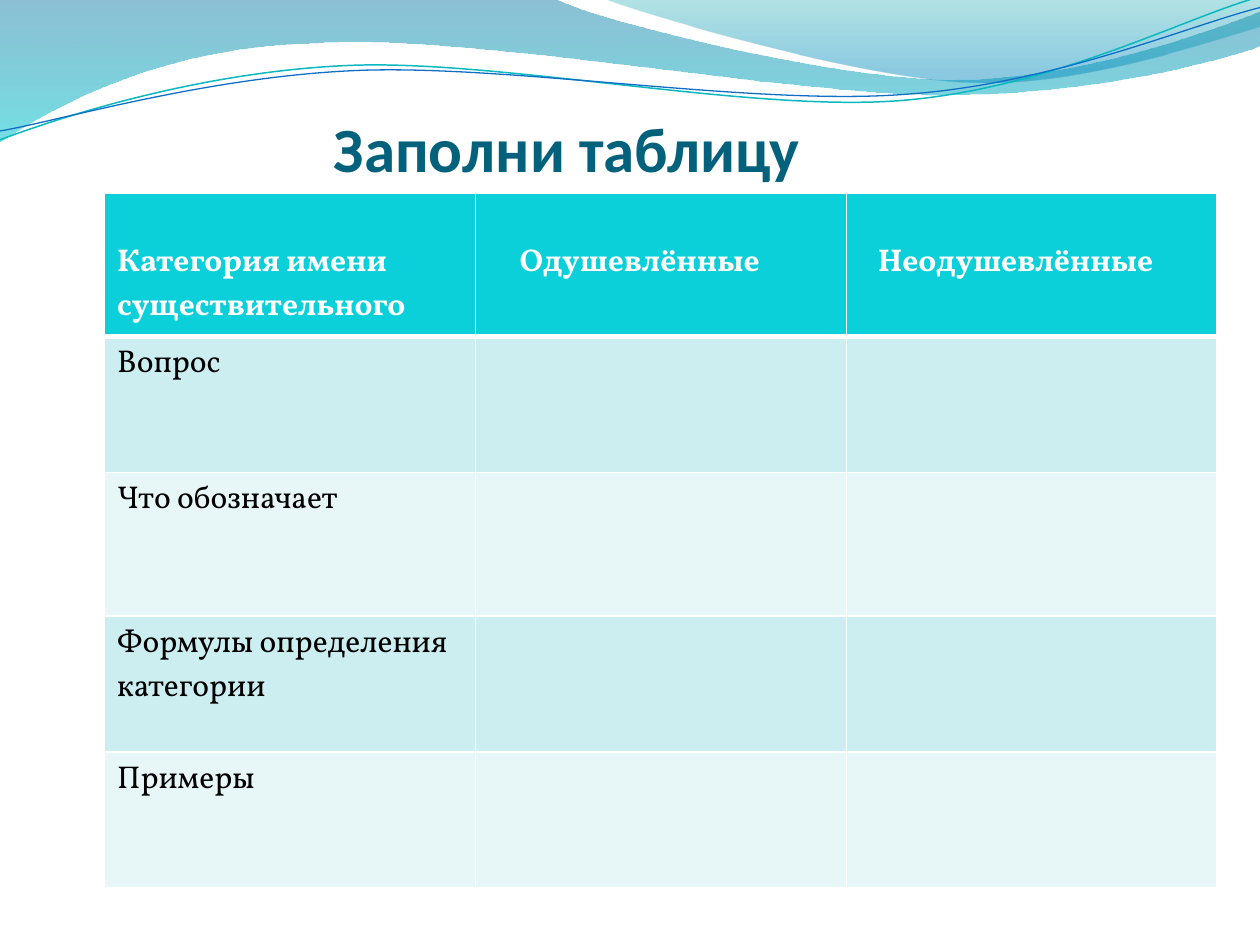
from lxml.etree import SubElement
from pptx import Presentation
from pptx.dml.color import RGBColor
from pptx.enum.text import MSO_ANCHOR, PP_ALIGN
from pptx.oxml.ns import qn
from pptx.util import Inches, Pt

COLORS = {
    "white": "FFFFFF", "black": "000000", "title": "04617B",
    "header": "0BD0D9", "dark_row": "CCEEF1", "light_row": "E7F7F8",
    "teal_line": "0AB8BF", "blue_line": "0F6FC6",
    "wave_top": "0074A1", "wave_bottom": "00C6CF",
    "corner_top": "00A1A9", "corner_bottom": "008BBF",
}

# Outlines in inches: a pair is a line end, six numbers are a Bézier curve
WAVE = [(0, 0), (4.4, -0.01), (4.76, 0.17, 6.64, 0.63, 7.58, 0.63),
        (8.53, 0.63, 9.58, 0.26, 10, 0.09), (10.01, 0.36),
        (9.83, 0.44, 8.7, 0.76, 7.46, 0.75), (6.22, 0.75, 3.82, 0.28, 2.57, 0.34),
        (1.29, 0.36, 0.46, 0.83, -0.01, 1.13), (0, 0)]
CORNER = [(4.79, -0.01), (5.09, 0.11, 6.82, 0.62, 7.69, 0.65),
          (8.56, 0.69, 9.61, 0.32, 10, 0.21), (10, 0), (4.79, -0.01)]
TEAL_LINE = [(0, 1.11), (0.48, 0.93, 1.58, 0.57, 2.77, 0.52),
             (3.95, 0.47, 5.93, 0.89, 7.13, 0.8), (8.33, 0.71, 9.38, 0.15, 9.98, -0.02)]
BLUE_LINE = [(0, 1.04), (0.47, 0.96, 1.64, 0.61, 2.83, 0.56),
             (4.03, 0.51, 5.97, 0.84, 7.17, 0.75), (8.36, 0.67, 9.41, 0.21, 10, 0.06)]

# Header text with its left margin, then the row labels
HEADERS = [("Категория имени существительного", 0.1),
           ("Одушевлённые", 0.35), ("Неодушевлённые", 0.25)]
ROW_LABELS = ["Вопрос", "Что обозначает", "Формулы определения категории", "Примеры"]
ROW_HEIGHTS = [1.14, 1.08, 1.14, 1.08, 1.08]
TABLE_WIDTH = 8.83


def rgb(name):
    return RGBColor.from_string(COLORS[name])


def add_outline(slide, outline, close):
    """Build the outline from all its points, then join triples into curves."""
    points = [(Inches(x), Inches(y)) for segment in outline
              for x, y in zip(segment[::2], segment[1::2])]
    builder = slide.shapes.build_freeform(*points[0])
    builder.add_line_segments(points[1:], close=close)
    shape = builder.convert_to_shape()
    shape.shadow.inherit = False

    line_ends = iter(list(shape.element.iter(qn("a:lnTo"))))
    for segment in outline[1:]:
        node = next(line_ends)
        if len(segment) == 6:
            node_parent = node.getparent()
            curve = SubElement(node_parent, qn("a:cubicBezTo"))
            node_parent.replace(node, curve)
            curve.append(node[0])
            for _ in range(2):
                extra = next(line_ends)
                curve.append(extra[0])
                node_parent.remove(extra)
    return shape


def add_wave(slide, outline, stops):
    """Add a closed wave; stops hold position, colour and opacity in percent."""
    shape = add_outline(slide, outline, close=True)
    shape.line.fill.background()
    shape.fill.gradient()
    shape.fill.gradient_angle = 270
    for stop, (_, color, _) in zip(shape.fill.gradient_stops, stops):
        stop.color.rgb = rgb(color)
    for node, (position, _, opacity) in zip(shape.element.iter(qn("a:gs")), stops):
        node.set("pos", str(position * 1000))
        SubElement(node[0], qn("a:alpha"), val=str(opacity * 1000))


def add_curve(slide, outline, color, width):
    shape = add_outline(slide, outline, close=False)
    shape.fill.background()
    shape.line.color.rgb = rgb(color)
    shape.line.width = Pt(width)


def set_title(slide, text):
    title = slide.shapes.title
    title.left, title.top = Inches(0), Inches(0.77)
    title.width, title.height = Inches(9), Inches(0.7)
    frame = title.text_frame
    frame.text = text
    frame.vertical_anchor = MSO_ANCHOR.BOTTOM
    frame.margin_left = frame.margin_right = frame.margin_bottom = 0
    frame.margin_top = Inches(0.05)
    paragraph = frame.paragraphs[0]
    paragraph.alignment = PP_ALIGN.CENTER
    font = paragraph.font
    font.name, font.size, font.bold = "Calibri", Pt(36), True
    font.color.rgb = rgb("title")


def set_borders(cell, top, bottom):
    properties = cell._tc.get_or_add_tcPr()
    sides = [("a:lnL", 1), ("a:lnR", 1), ("a:lnT", top), ("a:lnB", bottom)]
    for index, (side, width) in enumerate(sides):
        line = SubElement(properties, qn(side), w=str(Pt(width)))
        fill = SubElement(line, qn("a:solidFill"))
        SubElement(fill, qn("a:srgbClr"), val=COLORS["white"])
        properties.insert(index, line)


def fill_cell(cell, fill, text="", color="black", bold=False):
    cell.fill.solid()
    cell.fill.fore_color.rgb = rgb(fill)
    if not text:
        return
    cell.text = text
    font = cell.text_frame.paragraphs[0].font
    font.name, font.size, font.bold = "Vollkorn", Pt(18), bold
    font.color.rgb = rgb(color)


def add_category_table(slide):
    table = slide.shapes.add_table(
        len(ROW_HEIGHTS), len(HEADERS), Inches(0.83), Inches(1.53),
        Inches(TABLE_WIDTH), Inches(sum(ROW_HEIGHTS))).table
    for column in table.columns:
        column.width = Inches(TABLE_WIDTH / len(HEADERS))
    for row, height in zip(table.rows, ROW_HEIGHTS):
        row.height = Inches(height)

    # Header row, with the text one line down
    for cell, (text, margin) in zip(table.rows[0].cells, HEADERS):
        fill_cell(cell, "header", text, "white", True)
        cell.margin_left, cell.margin_top = Inches(margin), Inches(0.39)
        set_borders(cell, top=1, bottom=3)

    # Banded rows to be filled in
    for index, label in enumerate(ROW_LABELS, start=1):
        band = "dark_row" if index % 2 else "light_row"
        for column, cell in enumerate(table.rows[index].cells):
            fill_cell(cell, band, "" if column else label)
            set_borders(cell, top=3 if index == 1 else 1, bottom=1)


def main():
    presentation = Presentation()
    presentation.slide_width, presentation.slide_height = Inches(10), Inches(7.5)
    slide = presentation.slides.add_slide(presentation.slide_layouts[5])

    # Wave decoration
    add_wave(slide, WAVE, [(0, "wave_top", 45), (100, "wave_bottom", 55)])
    add_wave(slide, CORNER, [(0, "corner_top", 30), (80, "corner_bottom", 45)])
    add_curve(slide, TEAL_LINE, "teal_line", 0.85)
    add_curve(slide, BLUE_LINE, "blue_line", 0.75)

    # Content
    set_title(slide, "Заполни таблицу")
    add_category_table(slide)
    presentation.save("out.pptx")


if __name__ == "__main__":
    main()
